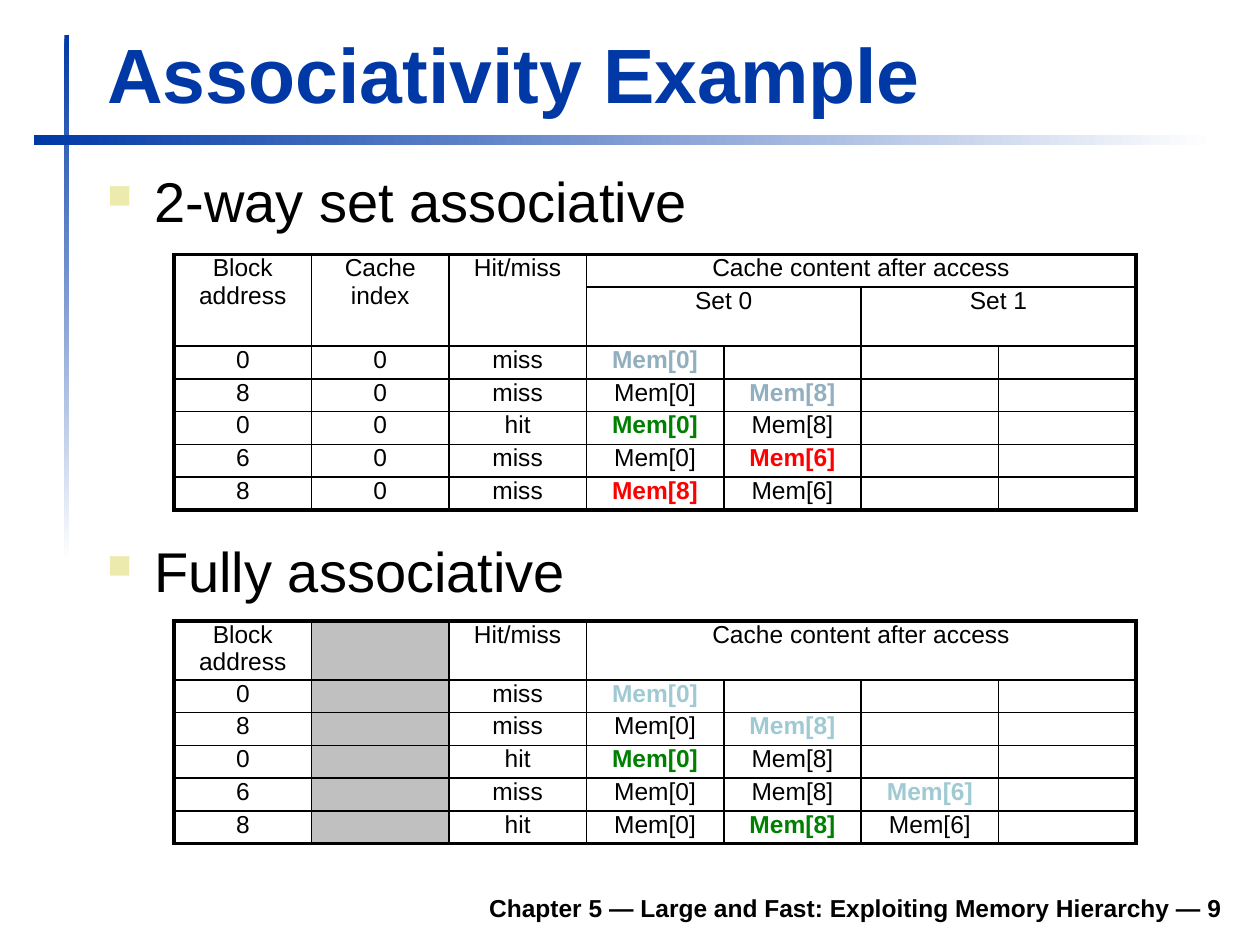
from dataclasses import dataclass

from lxml import etree
from pptx import Presentation
from pptx.dml.color import RGBColor
from pptx.enum import shapes, text
from pptx.oxml import ns
from pptx.util import Cm, Pt

FONT = "Arial"
BLUE = RGBColor(0x00, 0x39, 0xA6)
WHITE = RGBColor(0xFF, 0xFF, 0xFF)
BLACK = RGBColor(0x00, 0x00, 0x00)
BULLET = RGBColor(0xEC, 0xEA, 0xAC)
GREY = RGBColor(0xC0, 0xC0, 0xC0)
GREEN = RGBColor(0x00, 0x80, 0x00)
RED = RGBColor(0xFF, 0x00, 0x00)
STEEL = RGBColor(0x91, 0xAF, 0xBF)
AQUA = RGBColor(0x9F, 0xCA, 0xD3)

COLUMN_WIDTH = 2.77
ROW_HEIGHT = 0.66
TABLE_LEFT = 3.51
THIN, THICK = Pt(1), Pt(2.25)


@dataclass(frozen=True)
class Bar:
    left: float
    top: float
    width: float
    height: float
    angle: int


@dataclass(frozen=True)
class Entry:
    text: str = ""
    color: RGBColor = BLACK
    fill: RGBColor | None = None


@dataclass(frozen=True)
class CacheTable:
    heading: str
    heading_top: float
    line_spacing: float
    top: float
    header_heights: list[float]
    merges: list[tuple[int, int, int, int]]
    rows: list[list[str | Entry]]


UNUSED = Entry(fill=GREY)
BARS = [
    Bar(1.3, 0.71, 0.1, 10.59, 270),
    Bar(0.69, 2.72, 23.8, 0.2, 0),
]
TABLES = [
    CacheTable(
        "2-way set associative", 3.24, 1.0, 5.13, [ROW_HEIGHT, 1.11],
        [(0, 0, 1, 0), (0, 1, 1, 1), (0, 2, 1, 2),
         (0, 3, 0, 6), (1, 3, 1, 4), (1, 5, 1, 6)],
        [
            ["Block address", "Cache index", "Hit/miss", "Cache content after access"],
            ["", "", "", "Set 0", "", "Set 1"],
            ["0", "0", "miss", Entry("Mem[0]", STEEL)],
            ["8", "0", "miss", "Mem[0]", Entry("Mem[8]", STEEL)],
            ["0", "0", "hit", Entry("Mem[0]", GREEN), "Mem[8]"],
            ["6", "0", "miss", "Mem[0]", Entry("Mem[6]", RED)],
            ["8", "0", "miss", Entry("Mem[8]", RED), "Mem[6]"],
        ],
    ),
    CacheTable(
        "Fully associative", 10.84, 0.9, 12.52, [1.18],
        [(0, 3, 0, 6)],
        [
            ["Block address", UNUSED, "Hit/miss", "Cache content after access"],
            ["0", UNUSED, "miss", Entry("Mem[0]", AQUA)],
            ["8", UNUSED, "miss", "Mem[0]", Entry("Mem[8]", AQUA)],
            ["0", UNUSED, "hit", Entry("Mem[0]", GREEN), "Mem[8]"],
            ["6", UNUSED, "miss", "Mem[0]", "Mem[8]", Entry("Mem[6]", AQUA)],
            ["8", UNUSED, "hit", "Mem[0]", Entry("Mem[8]", GREEN), "Mem[6]"],
        ],
    ),
]


def set_font(paragraph, size: float, color: RGBColor = BLACK, bold: bool = False) -> None:
    font = paragraph.font
    font.name, font.size, font.bold = FONT, Pt(size), bold
    font.color.rgb = color


def add_bar(slide, bar: Bar) -> None:
    shape = slide.shapes.add_shape(
        shapes.MSO_SHAPE.RECTANGLE,
        Cm(bar.left), Cm(bar.top), Cm(bar.width), Cm(bar.height))
    shape.shadow.inherit = False
    shape.line.fill.background()
    shape.fill.gradient()
    shape.fill.gradient_angle = bar.angle
    for stop, color in zip(shape.fill.gradient_stops, (BLUE, WHITE)):
        stop.color.rgb = color


def add_text(slide, content: str, left: float, top: float, width: float, height: float):
    frame = slide.shapes.add_textbox(Cm(left), Cm(top), Cm(width), Cm(height)).text_frame
    frame.word_wrap = True
    frame.text = content
    return frame


def add_bullet(paragraph) -> None:
    properties = paragraph._p.get_or_add_pPr()
    properties.set("marL", str(Cm(0.95)))
    properties.set("indent", str(Cm(-0.95)))
    color = etree.Element(ns.qn("a:buClr"))
    etree.SubElement(color, ns.qn("a:srgbClr"), val=str(BULLET))
    size = etree.Element(ns.qn("a:buSzPct"), val="60000")
    character = etree.Element(ns.qn("a:buChar"), char="■")
    for element in (color, size, character):
        properties.append(element)


def add_heading(slide, table: CacheTable) -> None:
    frame = add_text(slide, table.heading, 1.91, table.heading_top, 22.5, 1.6)
    paragraph = frame.paragraphs[0]
    paragraph.line_spacing = table.line_spacing
    paragraph.space_before = Pt(6.4)
    add_bullet(paragraph)
    set_font(paragraph, 32)


def set_borders(cell, widths: dict[str, int]) -> None:
    properties = cell._tc.get_or_add_tcPr()
    for side, width in widths.items():
        line = etree.SubElement(properties, ns.qn(f"a:ln{side}"), w=str(width))
        fill = etree.SubElement(line, ns.qn("a:solidFill"))
        etree.SubElement(fill, ns.qn("a:srgbClr"), val=str(BLACK))


def fill_cell(cell, entry: Entry) -> None:
    cell.margin_top = cell.margin_bottom = 0
    if entry.fill is None:
        cell.fill.background()
    else:
        cell.fill.solid()
        cell.fill.fore_color.rgb = entry.fill
    cell.text = entry.text
    paragraph = cell.text_frame.paragraphs[0]
    paragraph.alignment = text.PP_ALIGN.CENTER
    set_font(paragraph, 14, entry.color, entry.color != BLACK)
    if not entry.text:
        etree.SubElement(paragraph._p, ns.qn("a:endParaRPr"), sz="1400")


def add_cache_table(slide, content: CacheTable) -> None:
    row_count, column_count = len(content.rows), 7
    heights = content.header_heights + [ROW_HEIGHT] * 5
    table = slide.shapes.add_table(
        row_count, column_count, Cm(TABLE_LEFT), Cm(content.top),
        Cm(COLUMN_WIDTH * column_count), Cm(sum(heights))).table
    table.first_row = table.horz_banding = False
    for column in table.columns:
        column.width = Cm(COLUMN_WIDTH)
    for row, height in zip(table.rows, heights):
        row.height = Cm(height)
    for top, left, bottom, right in content.merges:
        table.cell(top, left).merge(table.cell(bottom, right))
    for r, values in enumerate(content.rows):
        padded = values + [""] * (column_count - len(values))
        for c, value in enumerate(padded):
            cell = table.cell(r, c)
            set_borders(cell, {
                "L": THICK if c == 0 else THIN,
                "R": THICK if c + cell.span_width == column_count else THIN,
                "T": THICK if r == 0 else THIN,
                "B": THICK if r + cell.span_height == row_count else THIN,
            })
            fill_cell(cell, value if isinstance(value, Entry) else Entry(value))


def main() -> None:
    presentation = Presentation()
    presentation.slide_width, presentation.slide_height = Cm(25.4), Cm(19.05)
    slide = presentation.slides.add_slide(presentation.slide_layouts[5])

    title = slide.shapes.title
    title.left, title.top, title.width, title.height = Cm(1.91), Cm(0.41), Cm(22.94), Cm(2.11)
    title.text_frame.text = "Associativity Example"
    title.text_frame.vertical_anchor = text.MSO_ANCHOR.BOTTOM
    title.text_frame.paragraphs[0].alignment = text.PP_ALIGN.LEFT
    set_font(title.text_frame.paragraphs[0], 44, BLUE, True)

    for bar in BARS:
        add_bar(slide, bar)
    for table in TABLES:
        add_heading(slide, table)
        add_cache_table(slide, table)

    footer = add_text(
        slide, "Chapter 5 — Large and Fast: Exploiting Memory Hierarchy — 9",
        4.7, 17.73, 20.19, 0.99)
    footer.vertical_anchor = text.MSO_ANCHOR.BOTTOM
    footer.paragraphs[0].alignment = text.PP_ALIGN.RIGHT
    set_font(footer.paragraphs[0], 14, bold=True)
    presentation.save("out.pptx")


if __name__ == "__main__":
    main()
